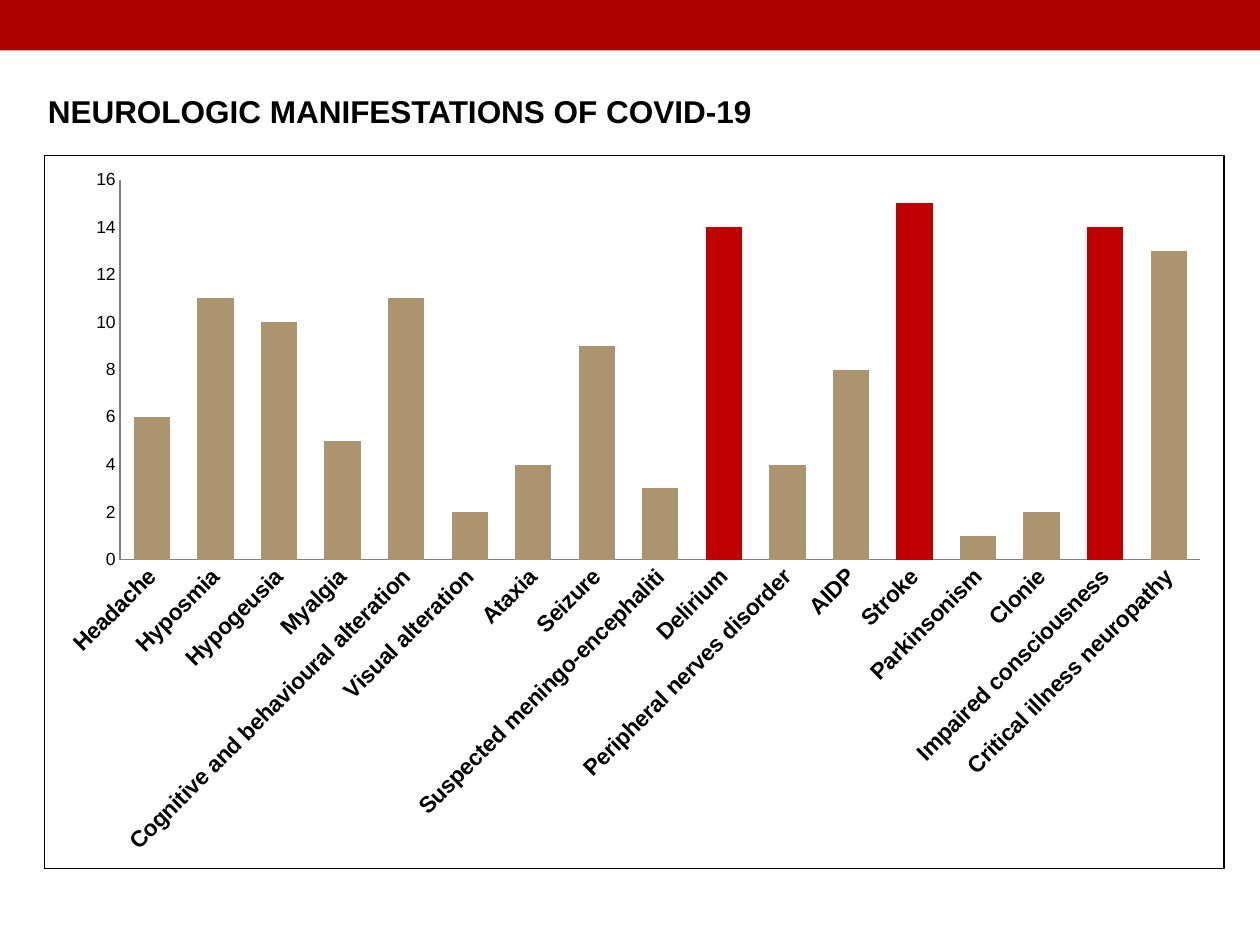
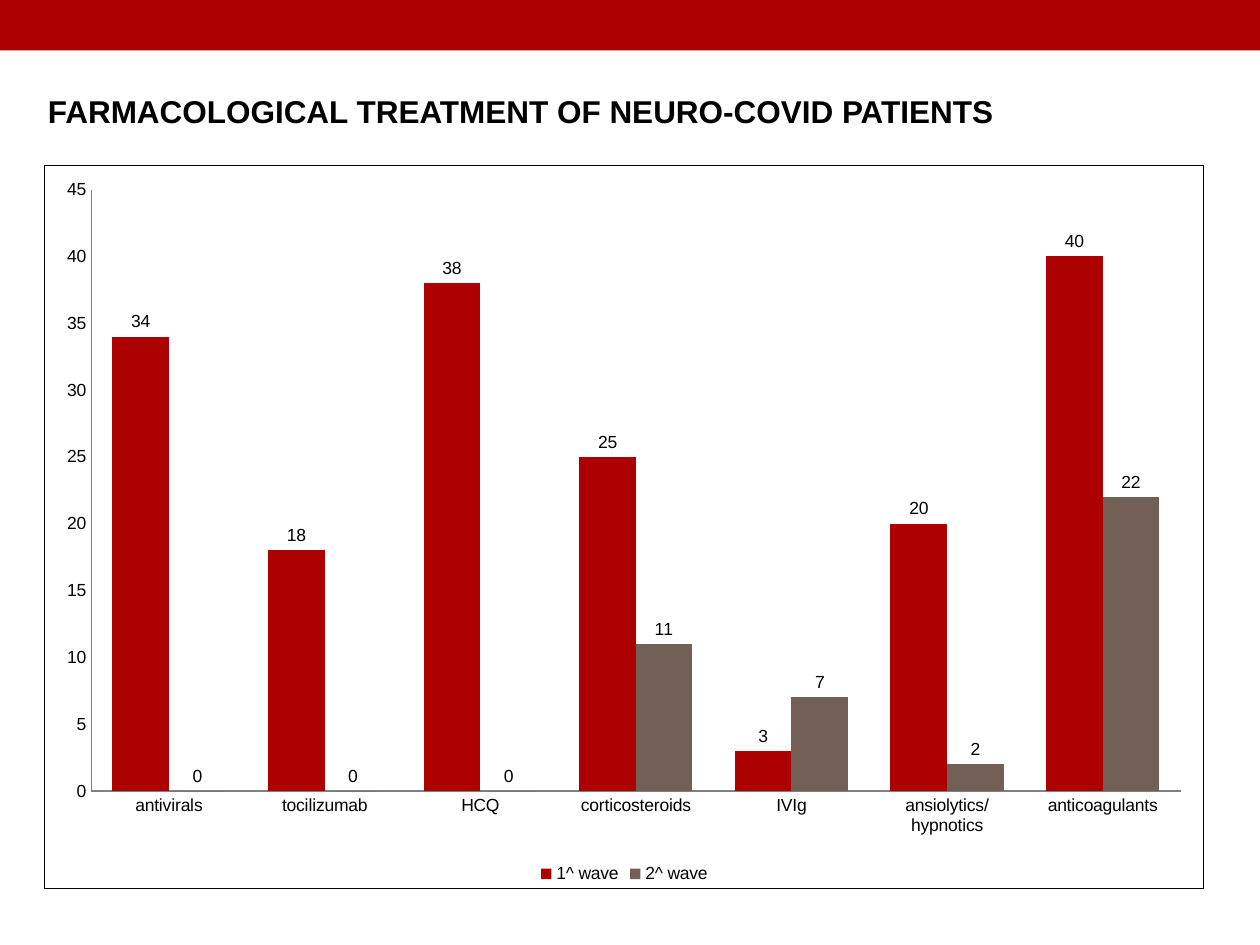
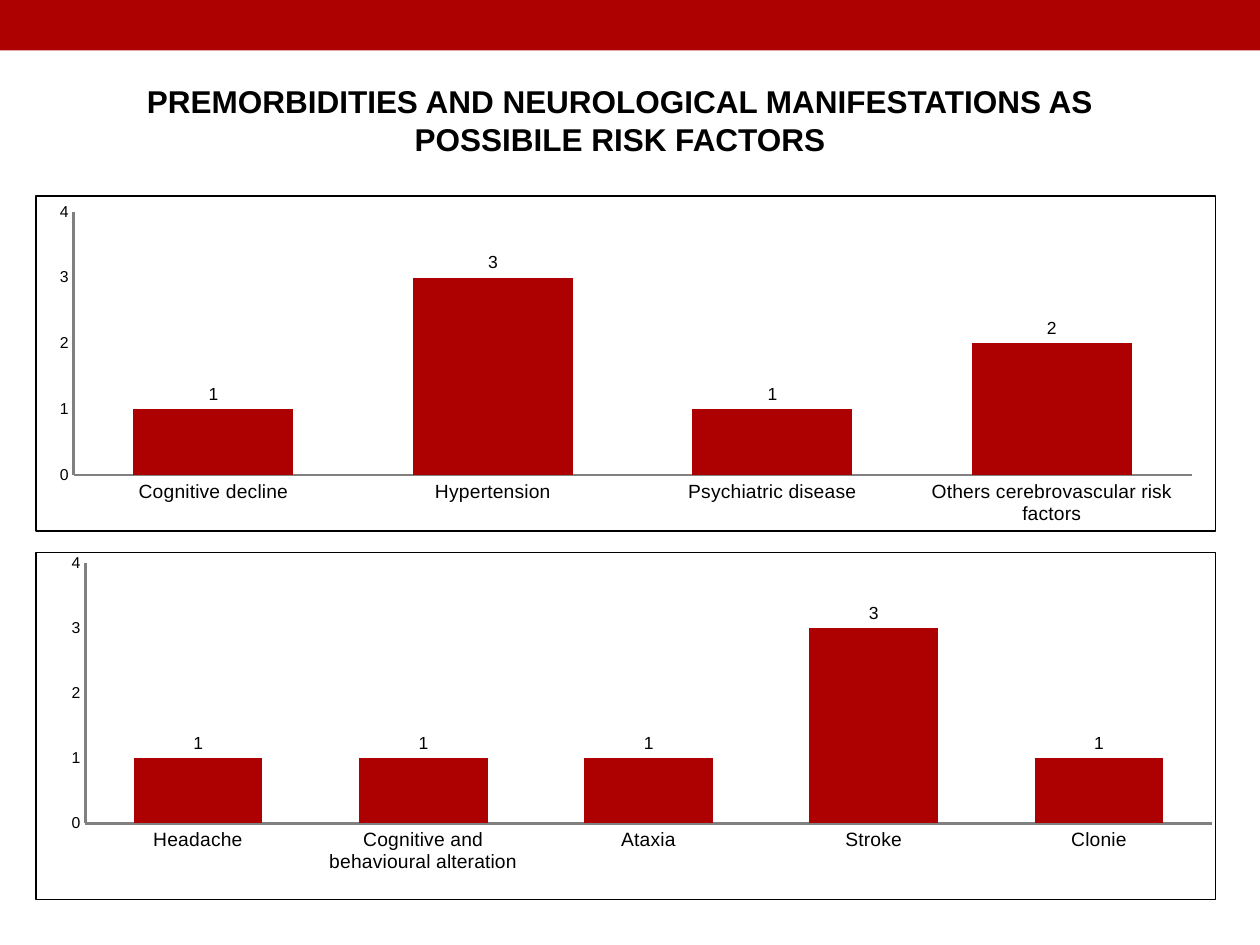
import pptx
import pptx.chart.data
import pptx.dml.color
import pptx.enum.chart
import pptx.enum.shapes
import pptx.enum.text
import pptx.oxml
import pptx.oxml.ns
import pptx.util

Cm, Pt = pptx.util.Cm, pptx.util.Pt
RGB = pptx.dml.color.RGBColor
Align = pptx.enum.text.PP_ALIGN
Kind = pptx.enum.chart

# Shared colours and formats
RED = RGB(0xAD, 0x01, 0x01)
DEEP = RGB(0xC0, 0x00, 0x00)
TAN = RGB(0xAC, 0x95, 0x6E)
BROWN = RGB(0x72, 0x60, 0x56)
GREY = RGB(0x80, 0x80, 0x80)
BLACK = RGB(0, 0, 0)
FACE = "Arial"
HEAD = {"name": FACE, "size": Pt(18), "bold": True}
NS = pptx.oxml.ns.nsdecls("c", "a")
BORDER = (f'<c:spPr {NS}><a:noFill/><a:ln w="9525"><a:solidFill>'
          f'<a:srgbClr val="{BLACK}"/></a:solidFill></a:ln></c:spPr>')


def style(item, vals):
    for key, val in vals.items():
        setattr(item, key, val)


def ink(font, size, bold=False):
    style(font, {"name": FACE, "size": Pt(size), "bold": bold})
    font.color.rgb = BLACK


# Slide content: title, its box, alignment, wrap, then the charts
# Boxes are in cm; plots are fractions of the chart
PAGES = [
    {"title": "NEUROLOGIC MANIFESTATIONS OF COVID-19",
     "box": (0.71, 1.73, 14.83, 1.02), "align": Align.LEFT, "wrap": False,
     "charts": [
         {"box": (0.89, 3.12, 23.8, 14.4), "plot": (0.064, 0.034, 0.916, 0.533),
          "cats": ["Headache", "Hyposmia", "Hypogeusia", "Myalgia",
                   "Cognitive and behavioural alteration", "Visual alteration",
                   "Ataxia", "Seizure", "Suspected meningo-encephaliti",
                   "Delirium", "Peripheral nerves disorder", "AIDP", "Stroke",
                   "Parkinsonism", "Clonie", "Impaired consciousness",
                   "Critical illness neuropathy"],
          "rows": [("Series 1", TAN, [6, 11, 10, 5, 11, 2, 4, 9, 3, 14, 4, 8,
                                      15, 1, 2, 14, 13])],
          "top": 16, "step": 2, "sizes": (13, 10), "line": 1,
          "marks": ["Delirium", "Stroke", "Impaired consciousness"],
          "slant": True}]},
    {"title": "FARMACOLOGICAL TREATMENT OF NEURO-COVID PATIENTS",
     "box": (0.71, 1.73, 19.76, 1.02), "align": Align.LEFT, "wrap": False,
     "charts": [
         {"box": (0.89, 3.33, 23.39, 14.6), "plot": (0.04, 0.033, 0.94, 0.832),
          "cats": ["antivirals", "tocilizumab", "HCQ", "corticosteroids",
                   "IVIg", "ansiolytics/hypnotics", "anticoagulants"],
          "rows": [("1^ wave", RED, [34, 18, 38, 25, 3, 20, 40]),
                   ("2^ wave", BROWN, [0, 0, 0, 11, 7, 2, 22])],
          "top": 45, "step": 5, "sizes": (10, 10), "line": 0.75}]},
    {"title": "PREMORBIDITIES AND NEUROLOGICAL MANIFESTATIONS AS "
              "POSSIBILE RISK FACTORS",
     "box": (1.5, 1.52, 22, 1.8), "align": Align.CENTER, "wrap": True,
     "charts": [
         {"box": (0.71, 3.94, 23.8, 6.78), "plot": (0.032, 0.047, 0.948, 0.786),
          "cats": ["Cognitive decline", "Hypertension", "Psychiatric disease",
                   "Others cerebrovascular risk factors"],
          "rows": [("Series 1", RED, [1, 3, 1, 2])],
          "top": 4, "step": 1, "sizes": (11, 9), "line": 1.5},
         {"box": (0.71, 11.13, 23.8, 7.01), "plot": (0.042, 0.03, 0.955, 0.751),
          "cats": ["Headache", "Cognitive and behavioural alteration",
                   "Ataxia", "Stroke", "Clonie"],
          "rows": [("Series 1", RED, [1, 1, 1, 3, 1])],
          "top": 4, "step": 1, "sizes": (11, 9), "line": 1.5}]},
]

deck = pptx.Presentation()
style(deck, {"slide_width": Cm(25.4), "slide_height": Cm(19.05)})

for num, page in enumerate(PAGES):
    slide = deck.slides.add_slide(deck.slide_layouts[5])

    # Red band, moved once to the master so every slide shows it
    if num == 0:
        band = slide.shapes.add_shape(pptx.enum.shapes.MSO_SHAPE.RECTANGLE,
                                      0, 0, deck.slide_width, Cm(1.02))
        band.shadow.inherit = False
        band.fill.solid()
        band.fill.fore_color.rgb = RED
        band.line.fill.background()
        deck.slide_master.shapes._spTree.append(band._element)

    # Title
    title = slide.shapes.title
    sides = ("left", "top", "width", "height")
    style(title, dict(zip(sides, map(Cm, page["box"]))))
    frame = title.text_frame
    frame.text = page["title"]
    style(frame, {"word_wrap": page["wrap"],
                  "auto_size": pptx.enum.text.MSO_AUTO_SIZE.SHAPE_TO_FIT_TEXT,
                  "vertical_anchor": pptx.enum.text.MSO_ANCHOR.TOP})
    para = frame.paragraphs[0]
    para.alignment = page["align"]
    style(para.runs[0].font, HEAD)
    para.runs[0].font.color.rgb = BLACK

    for item in page["charts"]:
        # Chart and its data
        data = pptx.chart.data.CategoryChartData()
        data.categories = item["cats"]
        for name, hue, vals in item["rows"]:
            data.add_series(name, vals)
        chart = slide.shapes.add_chart(Kind.XL_CHART_TYPE.COLUMN_CLUSTERED,
                                       *map(Cm, item["box"]), data).chart
        many = len(item["rows"]) > 1
        style(chart, {"has_title": False, "has_legend": many})
        ink(chart.font, 10)
        if many:
            style(chart.legend, {"position": Kind.XL_LEGEND_POSITION.BOTTOM,
                                 "include_in_layout": False})

        # Columns
        plot = chart.plots[0]
        style(plot, {"gap_width": 75, "overlap": 0, "vary_by_categories": False})
        for row, (name, hue, vals) in zip(plot.series, item["rows"]):
            row.invert_if_negative = False
            row.format.fill.solid()
            row.format.fill.fore_color.rgb = hue
        for mark in item.get("marks", []):
            fill = plot.series[0].points[item["cats"].index(mark)].format.fill
            fill.solid()
            fill.fore_color.rgb = DEEP
        if "marks" not in item:
            plot.has_data_labels = True
            style(plot.data_labels, {
                "show_value": True,
                "position": Kind.XL_LABEL_POSITION.OUTSIDE_END})
            ink(plot.data_labels.font, 10)

        # Axes
        slant = item.get("slant", False)
        axes = (chart.category_axis, chart.value_axis)
        for axis, size, bold in zip(axes, item["sizes"], (slant, False)):
            style(axis, {"has_major_gridlines": False,
                         "major_tick_mark": Kind.XL_TICK_MARK.NONE,
                         "minor_tick_mark": Kind.XL_TICK_MARK.NONE})
            ink(axis.tick_labels.font, size, bold)
            axis.format.line.color.rgb = GREY
            axis.format.line.width = Pt(item["line"])
        style(chart.value_axis, {"minimum_scale": 0,
                                 "maximum_scale": item["top"],
                                 "major_unit": item["step"]})
        if slant:
            body = axes[0]._element.find(".//" + pptx.oxml.ns.qn("a:bodyPr"))
            body.set("rot", "-2700000")

        # Frame line and inner plot area
        space = chart._chartSpace
        space.chart.addnext(pptx.oxml.parse_xml(BORDER))
        area = space.chart.plotArea
        for old in area.findall(pptx.oxml.ns.qn("c:layout")):
            area.remove(old)
        spots = "".join(f'<c:{key} val="{val}"/>'
                        for key, val in zip("xywh", item["plot"]))
        area.insert(0, pptx.oxml.parse_xml(
            f'<c:layout {NS}><c:manualLayout><c:layoutTarget val="inner"/>'
            f'<c:xMode val="edge"/><c:yMode val="edge"/>{spots}'
            '</c:manualLayout></c:layout>'))

deck.save("out.pptx")
